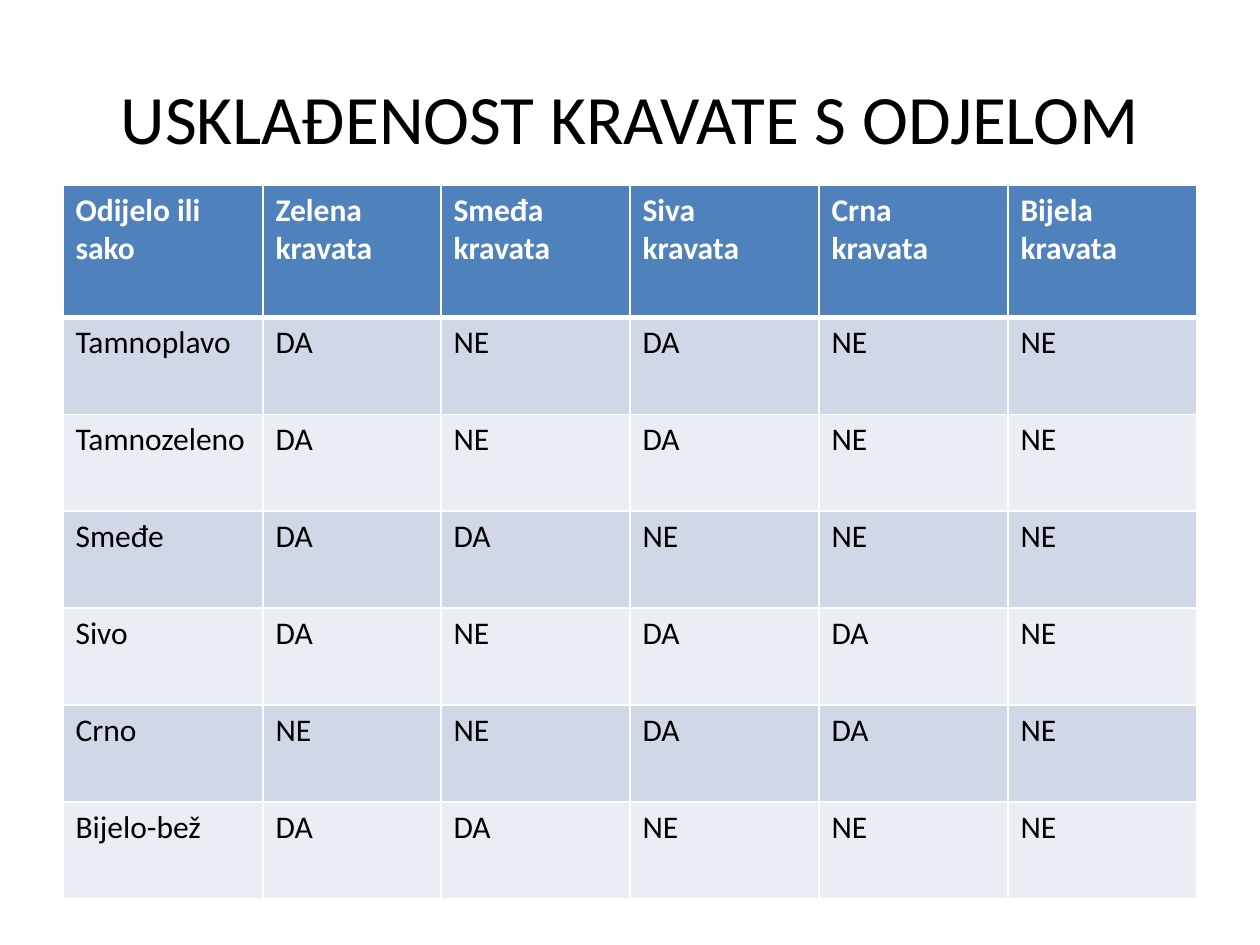
from lxml.etree import SubElement
from pptx import Presentation
from pptx.dml.color import RGBColor
from pptx.enum.text import MSO_ANCHOR, PP_ALIGN
from pptx.oxml.ns import qn
from pptx.util import Pt

TITLE = "USKLAĐENOST KRAVATE S ODJELOM"
ROWS = [
    ("Odijelo ili sako", "Zelena\nkravata", "Smeđa\nkravata", "Siva\nkravata", "Crna kravata", "Bijela kravata"),
    ("Tamnoplavo", "DA", "NE", "DA", "NE", "NE"),
    ("Tamnozeleno", "DA", "NE", "DA", "NE", "NE"),
    ("Smeđe", "DA", "DA", "NE", "NE", "NE"),
    ("Sivo", "DA", "NE", "DA", "DA", "NE"),
    ("Crno", "NE", "NE", "DA", "DA", "NE"),
    ("Bijelo-bež", "DA", "DA", "NE", "NE", "NE"),
]
COLORS = {"header": "4F81BD", "odd": "D0D8E8", "even": "E9EDF4", "white": "FFFFFF", "black": "000000"}
FONT = "Calibri"
COLUMN_WIDTHS = [114.3, 101.7] + [108] * 4
ROW_HEIGHTS = [75.6] + [55.4] * 6


def style_font(font, size, color, bold=False):
    font.name = FONT
    font.size = Pt(size)
    font.bold = bold
    font.color.rgb = RGBColor.from_string(COLORS[color])


def add_borders(cell, top, bottom):
    properties = cell._tc.get_or_add_tcPr()
    for side, width in (("L", 1), ("R", 1), ("T", top), ("B", bottom)):
        line = SubElement(properties, qn(f"a:ln{side}"), w=str(Pt(width)))
        fill = SubElement(line, qn("a:solidFill"))
        SubElement(fill, qn("a:srgbClr"), val=COLORS["white"])


def add_title(slide):
    title = slide.shapes.title
    title.left, title.top, title.width, title.height = Pt(36), Pt(21.6), Pt(648), Pt(90)
    title.text_frame.text = TITLE
    title.text_frame.vertical_anchor = MSO_ANCHOR.MIDDLE
    paragraph = title.text_frame.paragraphs[0]
    paragraph.alignment = PP_ALIGN.CENTER
    style_font(paragraph.font, 39.6, "black")


def add_tie_table(slide):
    table = slide.shapes.add_table(
        len(ROWS), len(COLUMN_WIDTHS), Pt(36), Pt(105.8),
        Pt(sum(COLUMN_WIDTHS)), Pt(sum(ROW_HEIGHTS)),
    ).table
    for column, width in zip(table.columns, COLUMN_WIDTHS):
        column.width = Pt(width)
    for index, (row, height, texts) in enumerate(zip(table.rows, ROW_HEIGHTS, ROWS)):
        row.height = Pt(height)
        is_header = index == 0
        band = "header" if is_header else "odd" if index % 2 else "even"
        for cell, text in zip(row.cells, texts):
            cell.text = text
            add_borders(cell, top=3 if index == 1 else 1, bottom=3 if is_header else 1)
            cell.fill.solid()
            cell.fill.fore_color.rgb = RGBColor.from_string(COLORS[band])
            for paragraph in cell.text_frame.paragraphs:
                style_font(paragraph.font, 18, "white" if is_header else "black", is_header)


def main():
    """Build the slide matching tie colours to suits."""
    presentation = Presentation()
    presentation.slide_width, presentation.slide_height = Pt(720), Pt(540)
    slide = presentation.slides.add_slide(presentation.slide_layouts[5])
    add_title(slide)
    add_tie_table(slide)
    presentation.save("out.pptx")


if __name__ == "__main__":
    main()
